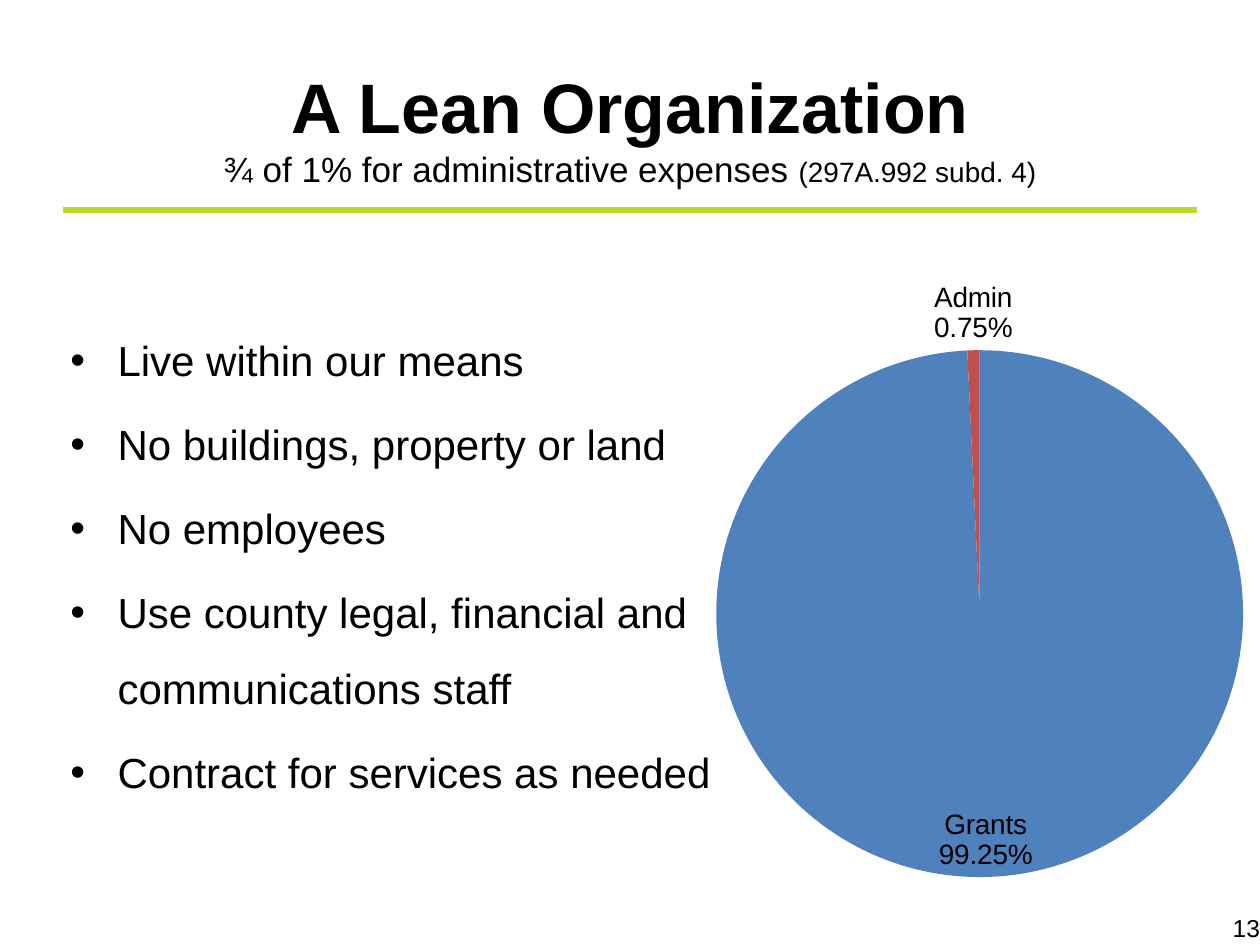
from copy import deepcopy
from dataclasses import dataclass

from lxml import etree
from pptx import Presentation
from pptx import util as u
from pptx.chart.data import CategoryChartData
from pptx.dml.color import RGBColor
from pptx.enum import chart as ch
from pptx.enum import shapes, text
from pptx.oxml import ns

HUES = {"ink": "000000", "rule": "C1D72E", "grants": "4F81BD", "admin": "C0504D"}
FACE = "Arial"


@dataclass
class Run:
    words: str
    size: int
    bold: bool = False


@dataclass
class Box:
    left: float
    top: float
    width: float
    height: float

    def dims(self) -> list:
        return [u.Cm(v) for v in (self.left, self.top, self.width, self.height)]


@dataclass
class Slice:
    name: str
    share: float
    hue: str


HEAD = [
    Run("A Lean Organization", 40, True),
    Run("¾ of 1% for administrative expenses ", 20),
    Run("(297A.992 subd. 4)", 16),
]
POINTS = [
    "Live within our means",
    "No buildings, property or land",
    "No employees",
    "Use county legal, financial and communications staff",
    "Contract for services as needed",
]
SLICES = [Slice("Grants", 99.25, "grants"), Slice("Admin", 0.75, "admin")]


def color(name: str) -> RGBColor:
    return RGBColor.from_string(HUES[name])


def style(font, size: int, bold: bool = False) -> None:
    font.name = FACE
    font.size = u.Pt(size)
    font.bold = bold
    font.color.rgb = color("ink")


def add_run(para, run: Run) -> None:
    part = para.add_run()
    part.text = run.words
    style(part.font, run.size, run.bold)


def add_title(slide) -> None:
    title = slide.shapes.title
    title.left, title.top, title.width, title.height = Box(1.27, 0.76, 22.86, 3.18).dims()
    frame = title.text_frame
    frame.word_wrap = True
    frame.auto_size = text.MSO_AUTO_SIZE.NONE
    frame.vertical_anchor = text.MSO_ANCHOR.BOTTOM
    para = frame.paragraphs[0]
    para.alignment = text.PP_ALIGN.CENTER
    add_run(para, HEAD[0])
    para.add_line_break()
    for run in HEAD[1:]:
        add_run(para, run)


def add_rule(slide) -> None:
    rule = slide.shapes.add_connector(
        shapes.MSO_CONNECTOR.STRAIGHT, u.Cm(1.27), u.Cm(4.24), u.Cm(24.13), u.Cm(4.24)
    )
    rule.line.color.rgb = color("rule")
    rule.line.width = u.Pt(3.5)
    etree.SubElement(rule._element.spPr, ns.qn("a:effectLst"))


def add_text(slide, box: Box, anchor):
    frame = slide.shapes.add_textbox(*box.dims()).text_frame
    frame.word_wrap = True
    frame.vertical_anchor = anchor
    return frame


def add_list(slide) -> None:
    frame = add_text(slide, Box(1.17, 4.45, 13.44, 13.41), text.MSO_ANCHOR.MIDDLE)
    for i, words in enumerate(POINTS):
        para = frame.add_paragraph() if i else frame.paragraphs[0]
        para.line_spacing = 1.5
        if i:
            para.space_before = u.Pt(4.8)
        props = para._p.get_or_add_pPr()
        props.set("marL", str(u.Cm(0.95)))
        props.set("indent", str(u.Cm(-0.95)))
        etree.SubElement(props, ns.qn("a:buFont"), typeface=FACE)
        etree.SubElement(props, ns.qn("a:buChar"), char="•")
        add_run(para, Run(words, 24))


def set_plot(chart, left: float, top: float, width: float, height: float) -> None:
    area = chart._chartSpace.chart.plotArea
    for old in area.findall(ns.qn("c:layout")):
        area.remove(old)
    layout = etree.Element(ns.qn("c:layout"))
    area.insert(0, layout)
    manual = etree.SubElement(layout, ns.qn("c:manualLayout"))
    pairs = [("layoutTarget", "inner"), ("xMode", "edge"), ("yMode", "edge"),
             ("x", left), ("y", top), ("w", width), ("h", height)]
    for tag, val in pairs:
        etree.SubElement(manual, ns.qn(f"c:{tag}"), val=str(val))


def add_break(node) -> None:
    gap = etree.Element(ns.qn("c:separator"))
    gap.text = "\n"
    node.find(ns.qn("c:showBubbleSize")).addnext(gap)


def add_pie(slide) -> None:
    data = CategoryChartData()
    data.categories = [s.name for s in SLICES]
    data.add_series("Series 1", [s.share for s in SLICES])
    chart = slide.shapes.add_chart(
        ch.XL_CHART_TYPE.PIE, *Box(14.1, 5.26, 11.3, 12.7).dims(), data
    ).chart
    chart.has_title = False
    chart.has_legend = False
    style(chart.font, 16)
    set_plot(chart, 0.03, 0.14, 0.94, 0.84)
    plot = chart.plots[0]
    plot.vary_by_categories = True
    series = plot.series[0]
    for i, part in enumerate(SLICES):
        fill = series.points[i].format.fill
        fill.solid()
        fill.fore_color.rgb = color(part.hue)

    labels = series.data_labels
    labels.show_value = False
    labels.show_percentage = True
    labels.show_category_name = True
    labels.number_format = "0.00%"
    labels.number_format_is_linked = False
    labels.position = ch.XL_LABEL_POSITION.INSIDE_END
    style(labels.font, 16)

    tag = series.points[1].data_label
    style(tag.font, 16)
    tag.position = ch.XL_LABEL_POSITION.OUTSIDE_END
    group = labels._element
    node = group.find(ns.qn("c:dLbl"))
    for name, val in (("showVal", "0"), ("showCatName", "1"), ("showPercent", "1")):
        node.find(ns.qn(f"c:{name}")).set("val", val)
    node.find(ns.qn("c:idx")).addnext(deepcopy(group.find(ns.qn("c:numFmt"))))
    add_break(node)
    add_break(group)


def add_number(slide) -> None:
    frame = add_text(slide, Box(19.48, 18.36, 5.92, 0.69), text.MSO_ANCHOR.MIDDLE)
    frame.margin_left = frame.margin_right = 0
    frame.margin_top = frame.margin_bottom = 0
    para = frame.paragraphs[0]
    para.alignment = text.PP_ALIGN.RIGHT
    add_run(para, Run("13", 14))


def main() -> None:
    deck = Presentation()
    deck.slide_width, deck.slide_height = u.Cm(25.4), u.Cm(19.05)
    slide = deck.slides.add_slide(deck.slide_layouts[5])
    add_rule(slide)
    add_title(slide)
    add_list(slide)
    add_pie(slide)
    add_number(slide)
    deck.save("out.pptx")


if __name__ == "__main__":
    main()
